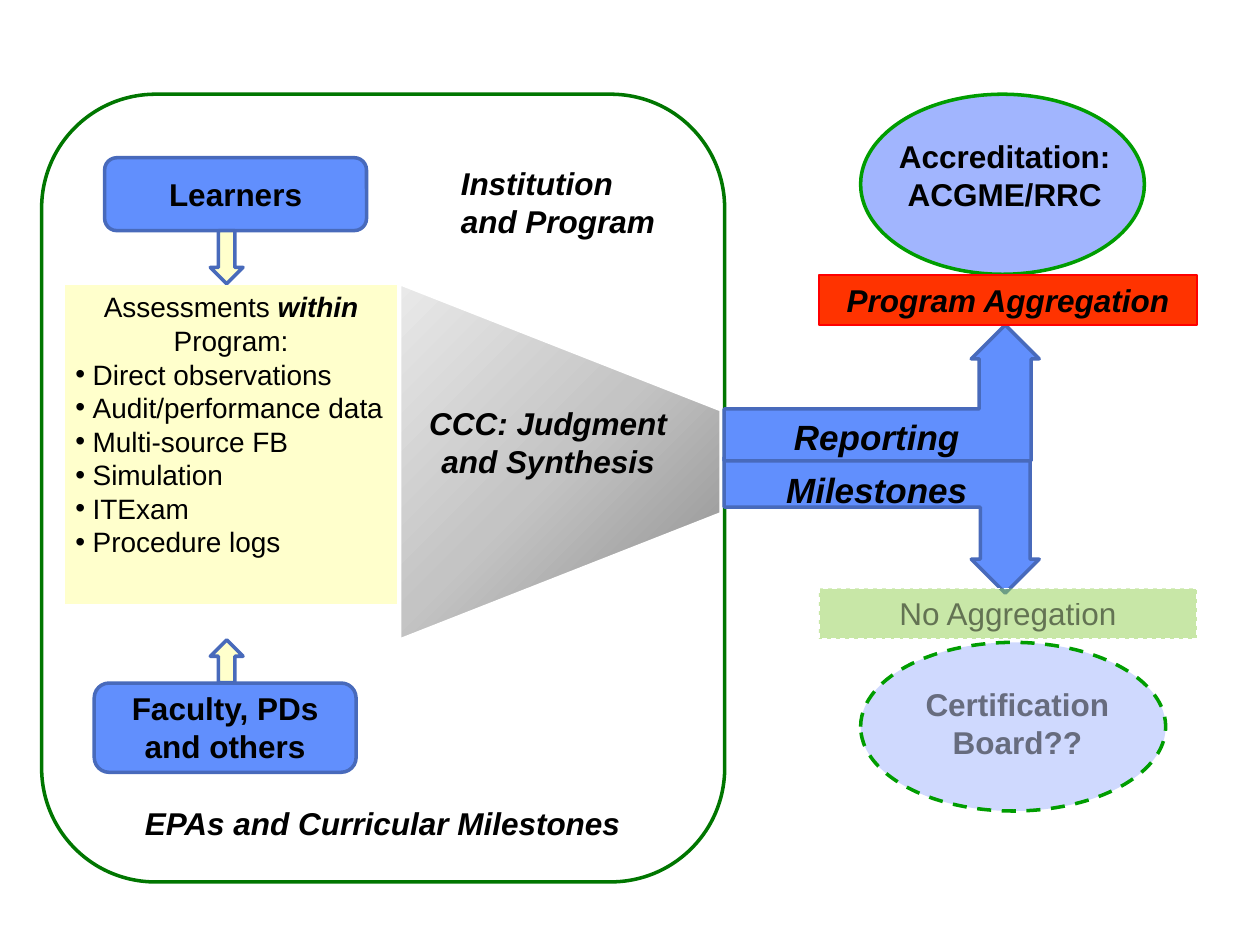
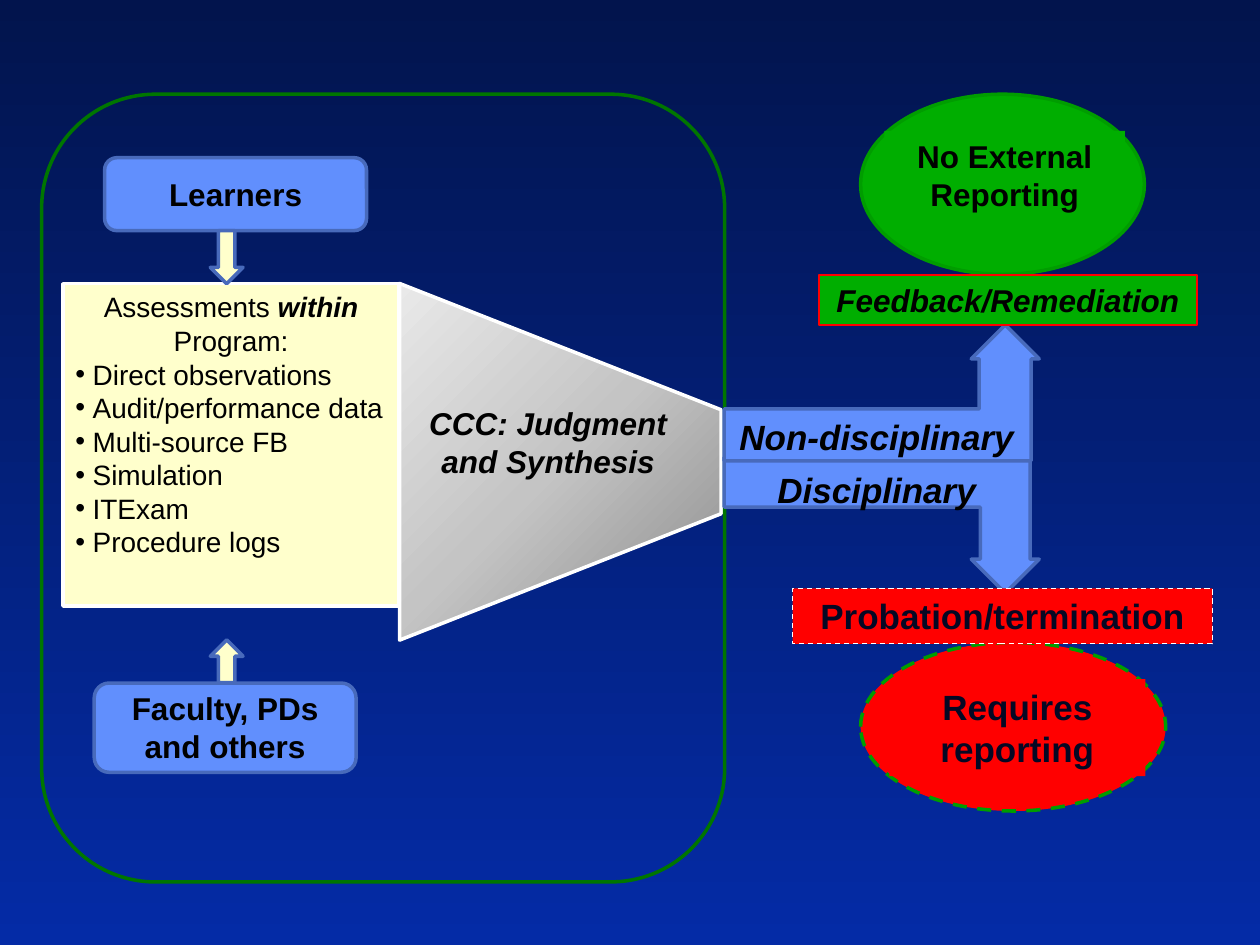
from copy import deepcopy

from lxml import etree
from pptx import Presentation
from pptx.dml.color import RGBColor
from pptx.enum.dml import MSO_LINE
from pptx.enum.shapes import MSO_SHAPE
from pptx.enum.text import MSO_ANCHOR, PP_ALIGN
from pptx.oxml.ns import qn
from pptx.util import Cm, Pt

RECT, ROUND, OVAL = MSO_SHAPE.RECTANGLE, MSO_SHAPE.ROUNDED_RECTANGLE, MSO_SHAPE.OVAL
DOWN, UP, BENT = MSO_SHAPE.DOWN_ARROW, MSO_SHAPE.UP_ARROW, MSO_SHAPE.BENT_UP_ARROW
TRAP, DASH = MSO_SHAPE.TRAPEZOID, MSO_LINE.DASH
LEFT, MID, TOP = PP_ALIGN.LEFT, PP_ALIGN.CENTER, MSO_ANCHOR.TOP

# Shared look
FONT = "Arial"
BLACK, WHITE, NAVY = "000000", "FFFFFF", "050824"
BLUE, EDGE, CREAM = "618FFD", "486ABB", "FFFFCC"
PALE, LIME, GREEN = "A1B5FE", "92D050", "00AE00"
RING, FRAME, RED, FLAME = "009D00", "007600", "FF0000", "FF3300"
GREYS = [(0, "8A8A8A"), (0.5, "C4C4C4"), (1, "E9E9E9")]
NIGHT = [(0, "02144D"), (1, "042BA6")]

# Content: a head line of (text, style) runs, then bullets
HEAD = [("Assessments ", ""), ("within", "bi"), (" Program:", "")]
TOOLS = ["Direct observations", "Audit/performance data", "Multi-source FB",
         "Simulation", "ITExam", "Procedure logs"]
PEOPLE = [  # text, card box, label box, arrow shape and box
    ("Learners", (2.11, 3.18, 5.28, 1.47), (2.11, 3.4, 5.28, 1.02),
     DOWN, (4.24, 4.65, 0.66, 1.07)),
    ("Faculty, PDs and others", (1.9, 13.77, 5.28, 1.8), (1.9, 13.77, 5.28, 1.8),
     UP, (4.24, 12.9, 0.66, 0.86)),
]
FLOWS = [(9.22, 0.367, True), (6.55, 0.382, False)]  # top, shaft, flipped
SLIDES = [
    dict(
        back=[(0, WHITE)],
        flows=["Reporting", "Milestones"],
        good=dict(text=["Accreditation:", "ACGME/RRC"], fill=PALE, under=None,
                  band="Program Aggregation", paint=FLAME),
        bad=dict(text=["Certification", "Board??"], fill=PALE, under=None,
                 high=1.8, band="No Aggregation", paint=LIME, style="",
                 size=18, ink=BLACK, alpha=50, spot=(16.51, 11.86, 7.62, 1.02)),
        notes=[("Institution and Program", (9.04, 3.18, 4.65, 1.8)),
               ("EPAs and Curricular Milestones", (2.67, 16.08, 10.13, 1.02))],
    ),
    dict(
        back=NIGHT,
        flows=["Non-disciplinary", "Disciplinary"],
        good=dict(text=["No External Reporting"], fill=GREEN, under=GREEN,
                  band="Feedback/Remediation", paint=GREEN),
        bad=dict(text=["Requires reporting"], fill=RED, under=RED,
                 high=1.96, band="Probation/termination", paint=RED, style="b",
                 size=20, ink=NAVY, alpha=100, spot=(15.98, 11.86, 8.46, 1.12)),
        notes=[],
    ),
]


def paint(color, value, alpha=100):
    color.rgb = RGBColor.from_string(value)
    if alpha < 100:
        node = color._xFill.find(qn("a:srgbClr"))
        etree.SubElement(node, qn("a:alpha"), val=str(alpha * 1000))


def blend(fill, stops, angle):
    """Gradient through (place, colour) stops; angle is counter-clockwise."""
    fill.gradient()
    fill.gradient_angle = angle
    first = fill.gradient_stops[0]._gs
    for _ in stops[2:]:
        first.addnext(deepcopy(first))
    for stop, (place, value) in zip(fill.gradient_stops, stops):
        stop.position = place
        paint(stop.color, value)


def draw(slide, kind, box, fill=None, line=None, width=2, dash=None,
         alpha=100, adjust=()):
    shape = slide.shapes.add_shape(kind, *map(Cm, box))
    shape.shadow.inherit = False
    if fill:
        shape.fill.solid()
        paint(shape.fill.fore_color, fill, alpha)
    else:
        shape.fill.background()
    if line:
        shape.line.width = Pt(width)
        paint(shape.line.color, line)
        if dash:
            shape.line.dash_style = dash
    else:
        shape.line.fill.background()
    for i, value in enumerate(adjust):
        shape.adjustments[i] = value
    return shape


def add_run(para, text, style, size, ink=BLACK, alpha=100):
    run = para.add_run()
    run.text = text
    font = run.font
    font.name, font.size = FONT, Pt(size)
    font.bold, font.italic = "b" in style, "i" in style
    font.fill.solid()
    paint(font.fill.fore_color, ink, alpha)


def write(shape, lines, style="b", size=18, ink=BLACK, alpha=100, align=MID):
    frame = shape.text_frame
    frame.word_wrap = True
    frame.vertical_anchor = TOP
    for i, text in enumerate(lines):
        para = frame.add_paragraph() if i else frame.paragraphs[0]
        para.alignment = align
        add_run(para, text, style, size, ink, alpha)


def label(slide, box, lines, fill=None, **look):
    if fill:
        shape = draw(slide, RECT, box, fill)
    else:
        shape = slide.shapes.add_textbox(*map(Cm, box))
    write(shape, lines, **look)


def add_tools(slide):
    """Panel of assessments with its bullet list."""
    panel = draw(slide, RECT, (1.27, 5.72, 6.78, 6.5), CREAM, WHITE)
    frame = panel.text_frame
    frame.word_wrap = True
    frame.vertical_anchor = TOP
    para = frame.paragraphs[0]
    para.alignment = MID
    for text, style in HEAD:
        add_run(para, text, style, 16)
    for text in TOOLS:
        para = frame.add_paragraph()
        para.alignment = LEFT
        props = para._p.get_or_add_pPr()
        props.set("marL", str(Cm(0.35)))
        props.set("indent", str(-Cm(0.35)))
        etree.SubElement(props, qn("a:buFont"), typeface=FONT)
        etree.SubElement(props, qn("a:buChar"), char="•")
        add_run(para, text, "", 16)


def add_program(slide):
    """Everything inside the program frame, and the arrows that leave it."""
    add_tools(slide)
    funnel = draw(slide, TRAP, (7.7, 6.07, 7.19, 6.48), CREAM, WHITE, adjust=[0.393])
    funnel.rotation = 90
    blend(funnel.fill, GREYS, 225)
    label(slide, (8.13, 8.03, 5.84, 1.8), ["CCC: Judgment and Synthesis"], style="bi")
    for text, card, spot, arrow, place in PEOPLE:
        draw(slide, ROUND, card, BLUE, EDGE)
        label(slide, spot, [text])
        draw(slide, arrow, place, CREAM, EDGE)
    draw(slide, ROUND, (0.84, 1.9, 13.77, 15.88), line=FRAME)
    for top, shaft, flip in FLOWS:
        arrow = draw(slide, BENT, (14.6, top, 6.35, 2.74), BLUE, EDGE,
                     adjust=[shaft, 0.25, 0.25])
        if flip:
            arrow._element.spPr.find(qn("a:xfrm")).set("flipV", "1")


def add_ends(slide, flows, good, bad):
    """Upper and lower outcome with the flow names between them."""
    draw(slide, OVAL, (17.35, 1.9, 5.72, 3.63), good["fill"], RING)
    label(slide, (17.83, 2.64, 4.85, 1.8), good["text"], good["under"])
    for i, text in enumerate(flows):
        label(slide, (14.6, 8.26 + 1.06 * i, 6.15, 1.12), [text], style="bi", size=20)
    band = draw(slide, RECT, (16.51, 5.54, 7.62, 1.02), good["paint"], RED, 1)
    write(band, [good["band"]], "bi")

    look = {key: bad[key] for key in ("size", "ink", "alpha")}
    draw(slide, OVAL, (17.35, 12.95, 6.15, 3.4), bad["fill"], RING,
         dash=DASH, alpha=bad["alpha"])
    label(slide, (17.93, 13.69, 5.16, bad["high"]), bad["text"], bad["under"], **look)
    band = draw(slide, RECT, bad["spot"], bad["paint"], WHITE, 0.75, DASH, bad["alpha"])
    write(band, [bad["band"]], bad["style"], **look)


def main():
    deck = Presentation()
    deck.slide_width, deck.slide_height = Cm(25.4), Cm(19.05)
    for data in SLIDES:
        slide = deck.slides.add_slide(deck.slide_layouts[6])
        fill, back = slide.background.fill, data["back"]
        if len(back) > 1:
            blend(fill, back, 270)
        else:
            fill.solid()
            paint(fill.fore_color, back[0][1])
        add_program(slide)
        add_ends(slide, data["flows"], data["good"], data["bad"])
        for text, box in data["notes"]:
            label(slide, box, [text], style="bi", align=LEFT)
    deck.save("out.pptx")


if __name__ == "__main__":
    main()
